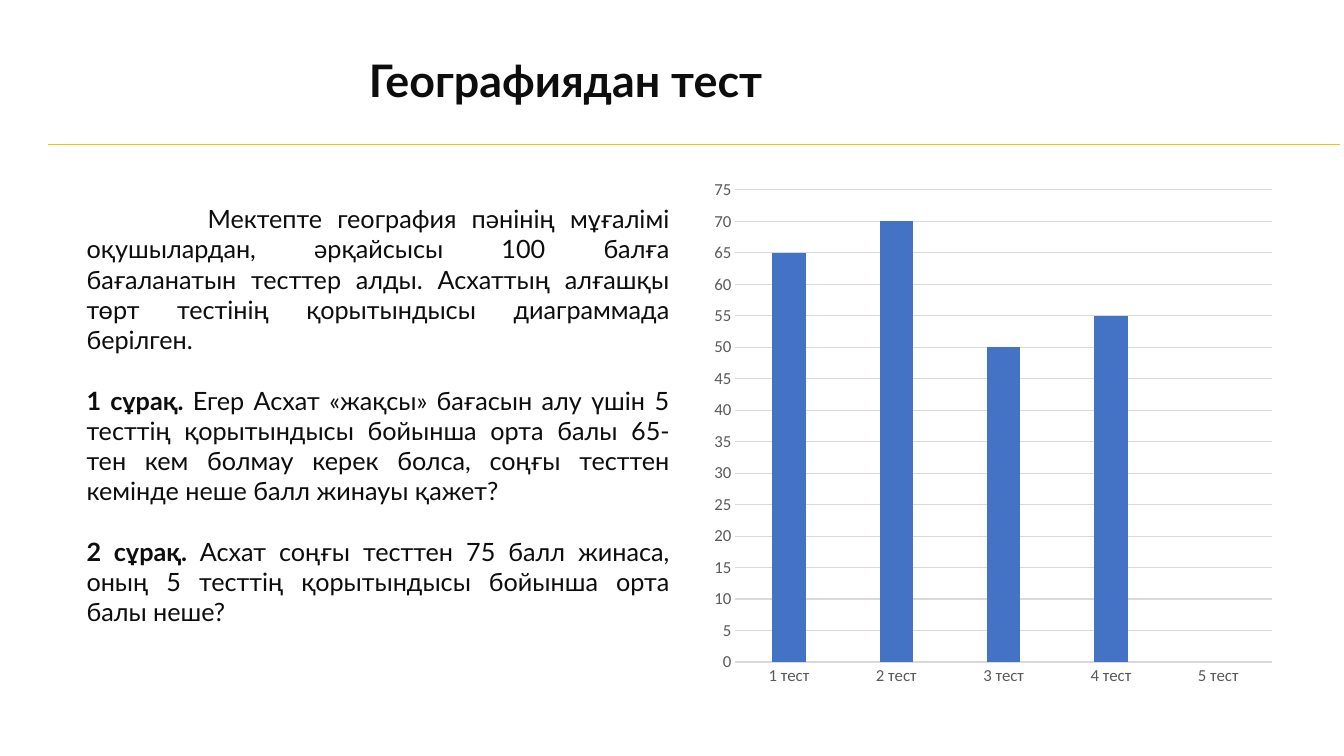
import dataclasses

import pptx
import pptx.chart.data
import pptx.dml.color
import pptx.enum.chart
import pptx.enum.shapes
import pptx.enum.text
import pptx.oxml.ns
import pptx.util
from lxml import etree

PX = 9144


@dataclasses.dataclass(frozen=True)
class Theme:
    ink: str = "0D0D0D"
    rule: str = "FFC000"
    bar: str = "4472C4"
    axis_text: str = "595959"
    grid: str = "D9D9D9"
    text_font: str = "Lato"
    chart_font: str = "Calibri"
    title_size: int = 32
    body_size: int = 18
    axis_size: int = 12
    rule_width: float = 0.5
    grid_width: float = 0.75
    paragraph_gap: float = 21.6


THEME = Theme()

TITLE = "Географиядан тест"
INTRODUCTION = (
    "Мектепте география пəнінің мұғалімі оқушылардан, əрқайсысы 100 балға "
    "бағаланатын тесттер алды. Асхаттың алғашқы төрт тестінің қорытындысы "
    "диаграммада берілген."
)
QUESTIONS = [
    ("1 сұрақ. ",
     "Егер Асхат «жақсы» бағасын алу үшін 5 тесттің қорытындысы бойынша орта "
     "балы 65-тен кем болмау керек болса, соңғы тесттен кемінде неше балл "
     "жинауы қажет?"),
    ("2 сұрақ. ",
     "Асхат соңғы тесттен 75 балл жинаса, оның 5 тесттің қорытындысы бойынша "
     "орта балы неше?"),
]
SCORES = {"1 тест": 65, "2 тест": 70, "3 тест": 50, "4 тест": 55, "5 тест": None}


def to_emu(*lengths):
    return [pptx.util.Emu(length * PX) for length in lengths]


def color(value):
    return pptx.dml.color.RGBColor.from_string(value)


def set_font(font, name, size, value):
    font.name = name
    font.size = pptx.util.Pt(size)
    font.color.rgb = color(value)


def set_line(line, value, width):
    line.color.rgb = color(value)
    line.width = pptx.util.Pt(width)


def add_title(slide, box):
    frame = slide.shapes.add_textbox(*to_emu(*box)).text_frame
    frame.word_wrap = False
    paragraph = frame.paragraphs[0]
    paragraph.text = TITLE
    set_font(paragraph.font, THEME.text_font, THEME.title_size, THEME.ink)
    paragraph.font.bold = True


def add_rule(slide, box):
    left, top, width, height = box
    connector = slide.shapes.add_connector(
        pptx.enum.shapes.MSO_CONNECTOR.STRAIGHT,
        *to_emu(left, top, left + width, top + height))
    set_line(connector.line, THEME.rule, THEME.rule_width)
    etree.SubElement(connector._element.spPr, pptx.oxml.ns.qn("a:effectLst"))


def add_problem(slide, box):
    frame = slide.shapes.add_textbox(*to_emu(*box)).text_frame
    frame.word_wrap = True
    introduction = frame.paragraphs[0]
    introduction.text = INTRODUCTION
    introduction._p.get_or_add_pPr().set("indent", str(120 * PX))
    for label, question in QUESTIONS:
        paragraph = frame.add_paragraph()
        paragraph.space_before = pptx.util.Pt(THEME.paragraph_gap)
        label_run = paragraph.add_run()
        label_run.text = label
        label_run.font.bold = True
        paragraph.add_run().text = question
    for paragraph in frame.paragraphs:
        paragraph.alignment = pptx.enum.text.PP_ALIGN.JUSTIFY
        set_font(paragraph.font, THEME.text_font, THEME.body_size, THEME.ink)


def add_score_chart(slide, box):
    data = pptx.chart.data.CategoryChartData()
    data.categories = list(SCORES)
    data.add_series("Series 1", list(SCORES.values()))
    chart = slide.shapes.add_chart(
        pptx.enum.chart.XL_CHART_TYPE.COLUMN_CLUSTERED, *to_emu(*box), data).chart
    chart.has_title = False
    chart.has_legend = False
    set_font(chart.font, THEME.chart_font, THEME.axis_size, THEME.axis_text)

    plot = chart.plots[0]
    plot.vary_by_categories = False
    plot.gap_width = 219
    plot.overlap = -27
    fill = plot.series[0].format.fill
    fill.solid()
    fill.fore_color.rgb = color(THEME.bar)

    for axis in (chart.category_axis, chart.value_axis):
        axis.major_tick_mark = pptx.enum.chart.XL_TICK_MARK.NONE
        axis.minor_tick_mark = pptx.enum.chart.XL_TICK_MARK.NONE
        set_font(axis.tick_labels.font, THEME.chart_font, THEME.axis_size, THEME.axis_text)
    set_line(chart.category_axis.format.line, THEME.grid, THEME.grid_width)

    value_axis = chart.value_axis
    value_axis.minimum_scale = 0
    value_axis.maximum_scale = 75
    value_axis.major_unit = 5
    value_axis.format.line.fill.background()
    value_axis.has_major_gridlines = True
    set_line(value_axis.major_gridlines.format.line, THEME.grid, THEME.grid_width)


def main():
    presentation = pptx.Presentation()
    presentation.slide_width, presentation.slide_height = to_emu(1333, 750)
    slide = presentation.slides.add_slide(presentation.slide_layouts[6])
    add_title(slide, (356, 47, 446, 64))
    add_rule(slide, (48, 143, 1281, 0))
    add_problem(slide, (76, 197, 598, 434))
    add_score_chart(slide, (697, 168, 576, 523))
    presentation.save("out.pptx")


if __name__ == "__main__":
    main()
